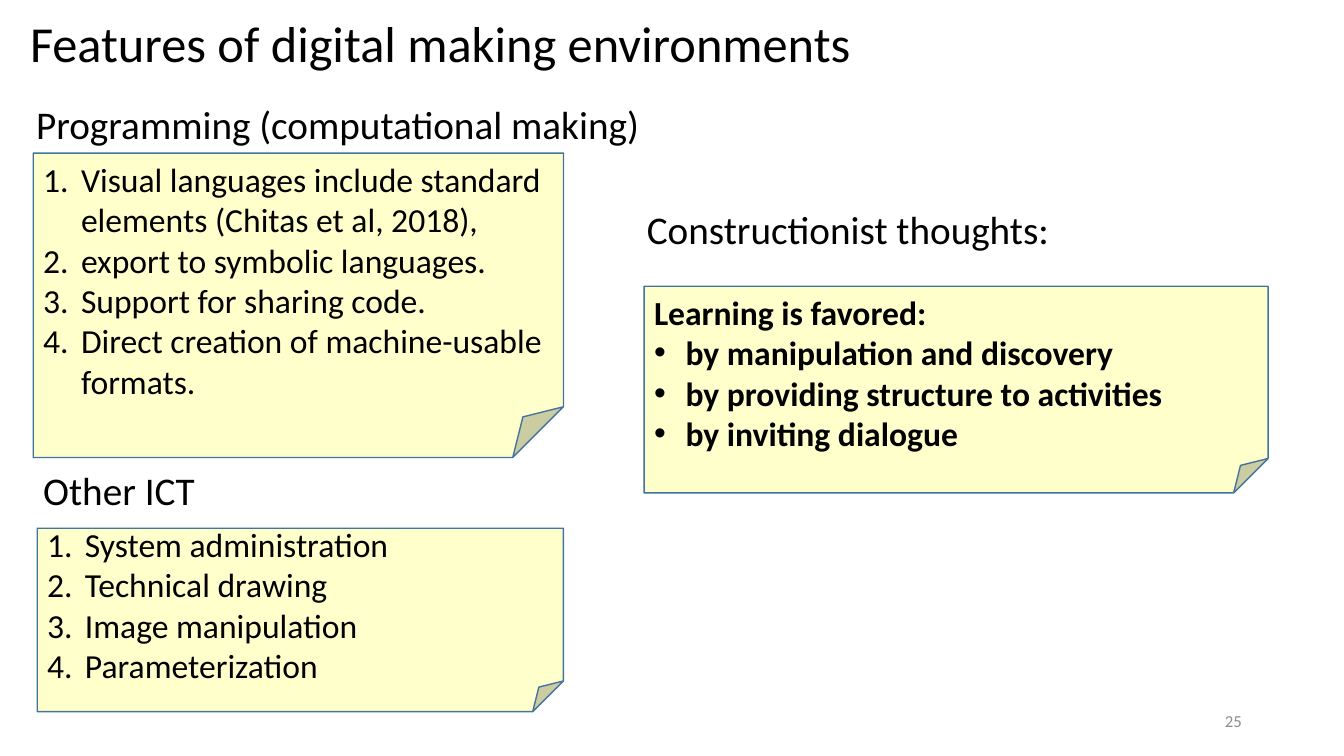
from lxml import etree
from pptx import Presentation
from pptx.dml.color import RGBColor
from pptx.enum.shapes import MSO_SHAPE as SHAPE
from pptx.enum.text import MSO_ANCHOR as ANCHOR, PP_ALIGN as ALIGN
from pptx.oxml.ns import qn
from pptx.util import Pt

# Content: boxes are (left, top, width, height) in points
BLACK, GREY, NOTE_FILL, NOTE_LINE = "000000", "8C8C8C", "FFFFCC", "43739E"
HEADINGS = [
    ("Features of digital making environments", (14.4, 9.4, 926.6, 47.5), 36),
    ("Programming (computational making)", (18.7, 66.2, 447.1, 48.2), 28),
    ("Other ICT", (23.8, 329.8, 324, 44.6), 28),
    ("Constructionist thoughts:", (455, 132.5, 445.7, 65.5), 28),
]
NUMBER, BULLET = "number", "bullet"
NOTES = [
    ((23.8, 109.4, 378.7, 217.4), False, [
        (NUMBER, "Visual languages include standard elements (Chitas et al, 2018),"),
        (NUMBER, "export to symbolic languages."),
        (NUMBER, "Support for sharing code."),
        (NUMBER, "Direct creation of machine-usable formats."),
    ]),
    ((26.6, 377.3, 375.8, 131), False, [
        (NUMBER, "System administration"),
        (NUMBER, "Technical drawing"),
        (NUMBER, "Image manipulation"),
        (NUMBER, "Parameterization"),
    ]),
    ((460.1, 204.5, 445.7, 147.6), True, [
        (None, "Learning is favored:"),
        (BULLET, "by manipulation and discovery"),
        (BULLET, "by providing structure to activities"),
        (BULLET, "by inviting dialogue"),
    ]),
]
# List kind: indent in points, then the marker elements
MARKERS = {
    NUMBER: (27, [("a:buFont", {"typeface": "+mj-lt"}),
                  ("a:buAutoNum", {"type": "arabicPeriod"})]),
    BULLET: (22.5, [("a:buFont", {"typeface": "Arial"}),
                    ("a:buChar", {"char": "•"})]),
}


def rgb(value):
    return RGBColor.from_string(value)


def place(box):
    return [Pt(v) for v in box]


def add_marker(p, kind):
    indent, elements = MARKERS[kind]
    pPr = p._p.get_or_add_pPr()
    pPr.set("marL", str(Pt(indent)))
    pPr.set("indent", str(-Pt(indent)))
    for tag, attributes in elements:
        etree.SubElement(pPr, qn(tag), attributes)


def write(sp, items, size=24, color=BLACK, bold=False, align=ALIGN.LEFT, spacing=None):
    tf = sp.text_frame
    tf.word_wrap = True
    tf.vertical_anchor = ANCHOR.MIDDLE
    for i, (kind, text) in enumerate(items):
        p = tf.add_paragraph() if i else tf.paragraphs[0]
        if kind:
            add_marker(p, kind)
        p.alignment = align
        if spacing:
            p.line_spacing = spacing
        r = p.add_run()
        r.text = text
        r.font.name, r.font.size, r.font.bold = "Calibri", Pt(size), bold
        r.font.color.rgb = rgb(color)


prs = Presentation()
prs.slide_width, prs.slide_height = Pt(960), Pt(540)
s = prs.slides.add_slide(prs.slide_layouts[6])

# Folded notes
for box, bold, items in NOTES:
    sp = s.shapes.add_shape(SHAPE.FOLDED_CORNER, *place(box))
    sp.shadow.inherit = False
    sp.fill.solid()
    sp.fill.fore_color.rgb = rgb(NOTE_FILL)
    sp.line.color.rgb = rgb(NOTE_LINE)
    sp.line.width = Pt(1)
    write(sp, items, bold=bold)

# Title and headings
for text, box, size in HEADINGS:
    write(s.shapes.add_textbox(*place(box)), [(None, text)], size=size, spacing=0.9)

# Slide number
write(s.shapes.add_textbox(*place((678.2, 500.4, 216, 28.8))), [(None, "25")],
      size=12, color=GREY, align=ALIGN.RIGHT)

prs.save("out.pptx")
